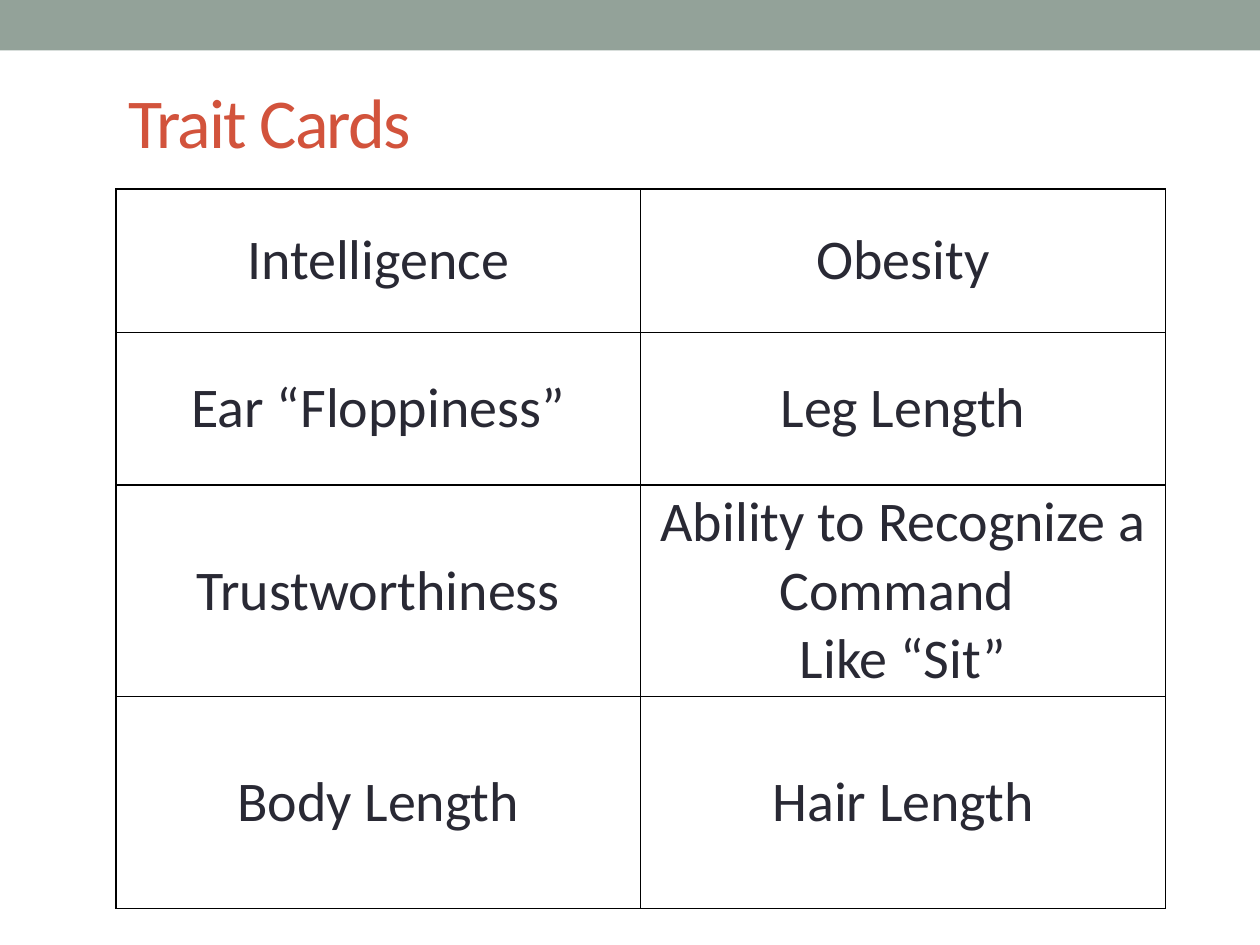
from dataclasses import dataclass

from lxml.etree import SubElement
from pptx import Presentation
from pptx.dml.color import RGBColor
from pptx.enum.shapes import MSO_SHAPE as Shape
from pptx.enum.text import MSO_ANCHOR as Anchor, PP_ALIGN as Align
from pptx.oxml.ns import qn
from pptx.slide import Slide
from pptx.table import _Cell as Cell
from pptx.util import Inches, Pt

SAGE = RGBColor(0x93, 0xA2, 0x99)
BRICK = RGBColor(0xD2, 0x53, 0x3C)
INK = RGBColor(0x29, 0x29, 0x34)
BLACK = RGBColor(0, 0, 0)
FONT = "Calibri"


@dataclass(frozen=True)
class TraitRow:
    height: float
    left: str
    right: str


TRAIT_ROWS = [
    TraitRow(1.14, "Intelligence", "Obesity"),
    TraitRow(1.21, "Ear “Floppiness”", "Leg Length"),
    TraitRow(1.68, "Trustworthiness", "Ability to Recognize a Command \nLike “Sit”"),
    TraitRow(1.68, "Body Length", "Hair Length"),
]


def add_run(paragraph, text: str, size: float, color: RGBColor):
    run = paragraph.add_run()
    run.text = text
    run.font.name = FONT
    run.font.size = Pt(size)
    run.font.color.rgb = color
    return run


def add_borders(cell: Cell) -> None:
    properties = cell._tc.get_or_add_tcPr()
    for side in ("a:lnL", "a:lnR", "a:lnT", "a:lnB"):
        border = SubElement(properties, qn(side), w=str(Pt(1)))
        fill = SubElement(border, qn("a:solidFill"))
        SubElement(fill, qn("a:srgbClr"), val=str(BLACK))


def fill_card(cell: Cell, trait: str) -> None:
    add_borders(cell)
    cell.fill.background()
    cell.vertical_anchor = Anchor.MIDDLE
    cell.margin_left = cell.margin_right = Inches(0.06)
    cell.margin_top = cell.margin_bottom = 0
    paragraph = cell.text_frame.paragraphs[0]
    paragraph.alignment = Align.CENTER
    for index, line in enumerate(trait.split("\n")):
        if index:
            paragraph.add_line_break()
        add_run(paragraph, line, 32, INK)


def add_top_band(slide: Slide) -> None:
    band = slide.shapes.add_shape(Shape.RECTANGLE, 0, 0, Inches(10), Inches(0.4))
    band.shadow.inherit = False
    band.fill.solid()
    band.fill.fore_color.rgb = SAGE
    band.line.fill.background()


def set_title(slide: Slide, text: str) -> None:
    title = slide.shapes.title
    title.left, title.top = Inches(0.92), Inches(0.5)
    title.width, title.height = Inches(8.58), Inches(0.92)
    title.text_frame.vertical_anchor = Anchor.MIDDLE
    paragraph = title.text_frame.paragraphs[0]
    paragraph.alignment = Align.LEFT
    run = add_run(paragraph, text, 40, BRICK)
    run._r.get_or_add_rPr().set("spc", "-100")


def add_trait_table(slide: Slide, rows: list[TraitRow]) -> None:
    height = sum(row.height for row in rows)
    frame = slide.shapes.add_table(
        len(rows), 2, Inches(0.92), Inches(1.5), Inches(8.33), Inches(height)
    )
    table = frame.table
    table.first_row = False
    table.horz_banding = False
    for index, row in enumerate(rows):
        table.rows[index].height = Inches(row.height)
        for column, trait in enumerate((row.left, row.right)):
            fill_card(table.cell(index, column), trait)


def main() -> None:
    deck = Presentation()
    deck.slide_width, deck.slide_height = Inches(10), Inches(7.5)
    slide = deck.slides.add_slide(deck.slide_layouts[5])
    add_top_band(slide)
    set_title(slide, "Trait Cards")
    add_trait_table(slide, TRAIT_ROWS)
    deck.save("out.pptx")


if __name__ == "__main__":
    main()
